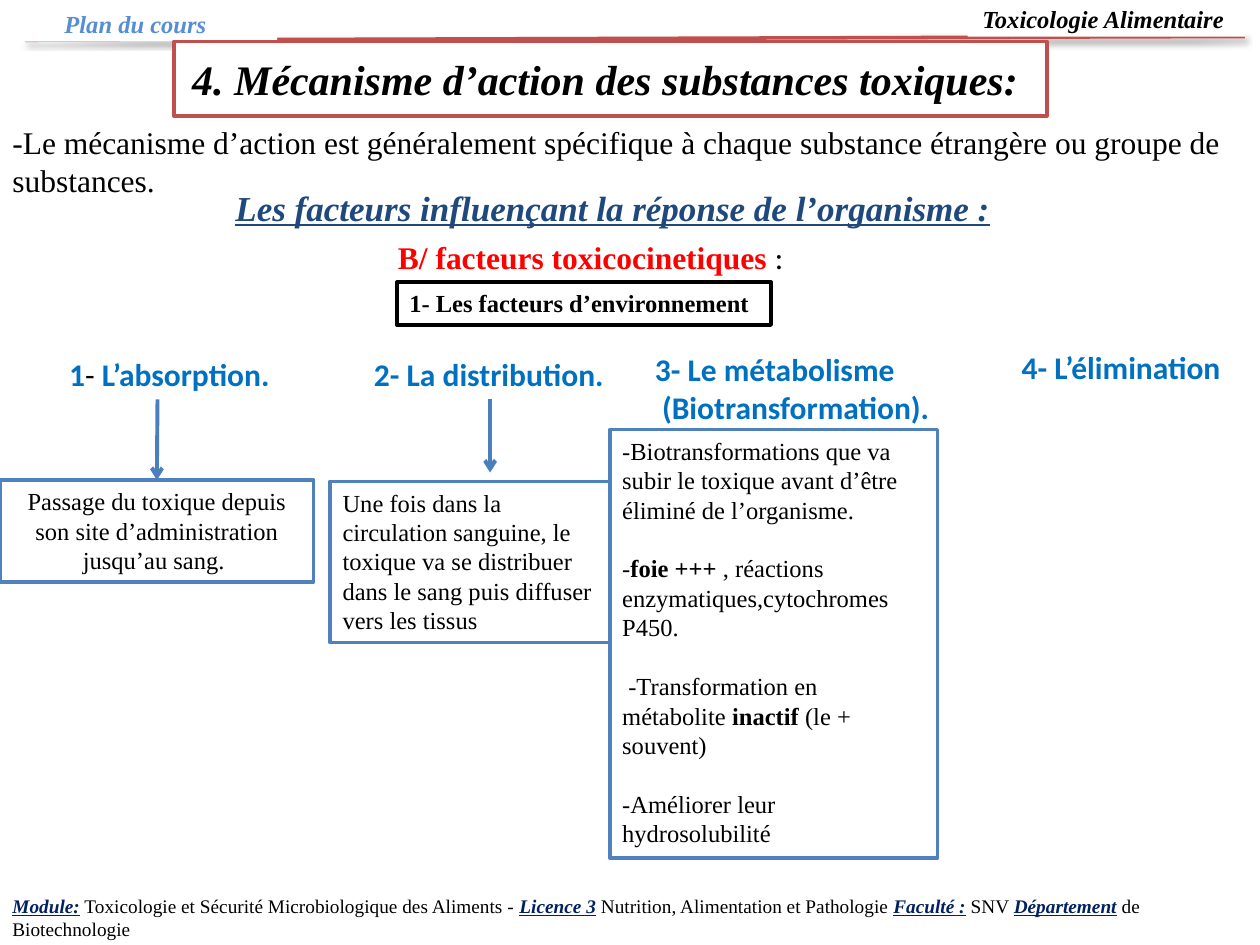
import collections
import lxml.etree
import pptx
import pptx.dml.color
import pptx.enum.shapes
import pptx.enum.text
import pptx.oxml
import pptx.oxml.ns
import pptx.util

Inches = pptx.util.Inches
Pt = pptx.util.Pt
ALIGN = pptx.enum.text.PP_ALIGN
ANCHOR = pptx.enum.text.MSO_ANCHOR
SERIF, SANS = "Times New Roman", "Calibri"
BLACK, WHITE, RED, BRICK = "000000", "FFFFFF", "FF0000", "C0504D"
NAVY, DEEP_BLUE, SKY, STEEL = "002060", "1F497D", "558ED5", "4F81BD"
HEADING_BLUE, ARROW_BLUE = "0070C0", "4B7EBC"

Box = collections.namedtuple("Box", "left top width height")


def inside(region, left, top, width, height):
    return Box(region.left + left, region.top + top, width, height)


def colour(hex_string):
    return pptx.dml.color.RGBColor.from_string(hex_string)


def run(text, size, tint=BLACK, font=SERIF, bold=False, italic=False, underline=False):
    return dict(text=text, size=size, tint=tint, font=font,
                bold=bold, italic=italic, underline=underline)


def add_effects(properties, shadow=None):
    """Write an effect list: empty, or holding a shadow of (blur, distance, alpha)."""
    effects = pptx.oxml.parse_xml(
        "<a:effectLst %s/>" % pptx.oxml.ns.nsdecls("a"))
    if shadow:
        blur, distance, alpha = shadow
        outer = lxml.etree.SubElement(
            effects, pptx.oxml.ns.qn("a:outerShdw"), blurRad=str(Pt(blur)),
            dist=str(Pt(distance)), dir="5400000", rotWithShape="0")
        tint = lxml.etree.SubElement(outer, pptx.oxml.ns.qn("a:srgbClr"), val=BLACK)
        lxml.etree.SubElement(tint, pptx.oxml.ns.qn("a:alpha"), val=str(alpha * 1000))
    fill = properties.find(pptx.oxml.ns.qn("a:solidFill"))
    if fill is not None:
        fill.addnext(effects)
    else:
        properties.append(effects)


def write(shape, paragraphs, align=ALIGN.LEFT, anchor=ANCHOR.TOP,
          wrap=True, grow=True, gap=0):
    frame = shape.text_frame
    frame.word_wrap = wrap
    frame.vertical_anchor = anchor
    if grow:
        frame.auto_size = pptx.enum.text.MSO_AUTO_SIZE.SHAPE_TO_FIT_TEXT
    for number, runs in enumerate(paragraphs):
        para = frame.add_paragraph() if number else frame.paragraphs[0]
        para.alignment = align
        para.space_before = Pt(gap if number else 0)
        for style in runs:
            span = para.add_run()
            span.text = style["text"]
            span.font.size = Pt(style["size"])
            span.font.name = style["font"]
            span.font.bold = style["bold"]
            span.font.italic = style["italic"]
            span.font.underline = style["underline"]
            span.font.color.rgb = colour(style["tint"])


def add_text(page, box, paragraphs, **layout):
    shape = page.shapes.add_textbox(*map(Inches, box))
    write(shape, paragraphs, **layout)
    return shape


def add_panel(page, box, paragraphs, border=None, **layout):
    shape = page.shapes.add_shape(
        pptx.enum.shapes.MSO_SHAPE.RECTANGLE, *map(Inches, box))
    shape.shadow.inherit = False
    shape.fill.solid()
    shape.fill.fore_color.rgb = colour(WHITE)
    if border:
        shape.line.color.rgb = colour(border)
        shape.line.width = Pt(2)
    else:
        shape.line.fill.background()
    write(shape, paragraphs, **layout)
    return shape


def add_line(page, start, end, tint, width, arrow=False, shadow=None):
    line = page.shapes.add_connector(
        pptx.enum.shapes.MSO_CONNECTOR.STRAIGHT, *map(Inches, start + end))
    line.line.color.rgb = colour(tint)
    line.line.width = Pt(width)
    properties = line._element.spPr
    if arrow:
        outline = properties.find(pptx.oxml.ns.qn("a:ln"))
        lxml.etree.SubElement(outline, pptx.oxml.ns.qn("a:tailEnd"), type="arrow")
    add_effects(properties, shadow)
    return line


def add_header(page, region):
    centred = dict(align=ALIGN.CENTER, anchor=ANCHOR.MIDDLE, grow=False)
    left, top = region.left, region.top
    add_line(page, (left + 0.2, top + 0.32), (left + 9.88, top + 0.29),
             BRICK, 2, shadow=(3.1, 1.6, 38))
    for text, x, y, tint in (("Toxicologie Alimentaire ", 7.68, 0, BLACK),
                             ("Plan du cours ", 0, 0.04, SKY)):
        add_panel(page, inside(region, x, y, 2.2, 0.29),
                  [[run(text, 14, tint, bold=True, italic=True)]], **centred)
    # Slide title
    title = "4. Mécanisme d’action des substances toxiques: "
    add_panel(page, inside(region, 1.38, 0.33, 6.93, 0.59),
              [[run(title, 24, bold=True, italic=True)]], BRICK, **centred)


def add_introduction(page, region):
    add_text(page, inside(region, 0, 0, region.width, 0.71), [[run(
        "-Le mécanisme d’action est généralement spécifique à chaque substance "
        "étrangère ou groupe de substances.", 18)]])
    add_text(page, inside(region, 1.77, 0.5, 6.22, 0.44), [[run(
        "Les facteurs influençant la réponse de l’organisme :", 20, DEEP_BLUE,
        bold=True, italic=True, underline=True)]])
    add_text(page, inside(region, 3.06, 0.91, 3.29, 0.4),
             [[run("B/ facteurs toxicocinetiques ", 18, RED, bold=True),
               run(":", 18, font=SANS)]], wrap=False)
    add_panel(page, inside(region, 3.15, 1.31, 2.97, 0.34),
              [[run("1- Les facteurs d’environnement", 14, bold=True)]],
              BLACK, wrap=False)


def add_stages(page, region):
    def heading(text):
        return run(text, 18, HEADING_BLUE, SANS, bold=True)

    left, top = region.left, region.top

    # Distribution
    add_panel(page, inside(region, 2.62, 1.11, 2.22, 1.28), [[run(
        "Une fois dans la circulation sanguine, le toxique va se distribuer "
        "dans le sang puis diffuser vers les tissus", 14)]], STEEL)

    # Headings
    for x, y, width, height, paragraphs, wrap in (
            (0.45, 0.06, 1.81, 0.4, [[heading("1"), run("- ", 18, font=SANS),
                                      heading("L’absorption.")]], False),
            (2.87, 0.06, 2.04, 0.4, [[heading("2- La distribution.")]], False),
            (5.1, 0.02, 2.5, 0.71, [[heading("3- Le métabolisme")],
                                    [heading(" (Biotransformation).")]], True),
            (8.01, 0, 1.79, 0.4, [[heading("4- L’élimination")]], False)):
        add_text(page, inside(region, x, y, width, height), paragraphs, wrap=wrap)

    # Absorption
    absorption = add_panel(page, inside(region, 0, 1.1, 2.49, 0.81), [[run(
        "Passage du toxique depuis son site d’administration jusqu’au sang. ",
        14)]], STEEL, align=ALIGN.CENTER)

    # Arrows
    arrow = add_line(page, (left + 1.25, top + 0.46), (left + 1.24, top + 1.1),
                     ARROW_BLUE, 2.25, arrow=True)
    arrow.end_connect(absorption, 0)
    add_line(page, (left + 3.89, top + 0.46), (left + 3.89, top + 1.04),
             ARROW_BLUE, 2.25, arrow=True)

    # Metabolism
    add_panel(page, inside(region, 4.84, 0.7, 2.6, 3.4), [
        [run("-Biotransformations que va subir le toxique avant d’être "
             "éliminé de l’organisme.", 14)],
        [run("-", 14), run("foie +++ ", 14, bold=True),
         run(", réactions enzymatiques,cytochromes P450.", 14)],
        [run(" -Transformation en métabolite ", 14),
         run("inactif ", 14, bold=True), run("(le + souvent)", 14)],
        [run("-Améliorer leur hydrosolubilité", 14)]], STEEL, gap=16.8)


def add_footer(page, region):
    def label(text):
        return run(text, 11, NAVY, bold=True, italic=True, underline=True)

    footer = add_text(page, region, [[
        label("Module:"),
        run(" Toxicologie et Sécurité Microbiologique des Aliments - ", 11),
        label("Licence 3"),
        run(" Nutrition, Alimentation et Pathologie ", 11),
        label("Faculté :"), run(" SNV ", 11),
        label("Département"), run(" de Biotechnologie", 11)]],
        anchor=ANCHOR.MIDDLE, grow=False)
    footer.text_frame.margin_right = Inches(0.4)
    for span in footer.text_frame.paragraphs[0].runs:
        add_effects(span.font._element, (3, 3, 40))


def main():
    deck = pptx.Presentation()
    deck.slide_width, deck.slide_height = Inches(10), Inches(7.5)
    page = deck.slides.add_slide(deck.slide_layouts[6])
    add_footer(page, Box(0, 7.05, 10.05, 0.46))
    add_header(page, Box(0, 0, 10, 0.92))
    add_introduction(page, Box(0, 0.93, 10, 1.65))
    add_stages(page, Box(0, 2.71, 10, 4.1))
    deck.save("out.pptx")


if __name__ == "__main__":
    main()
